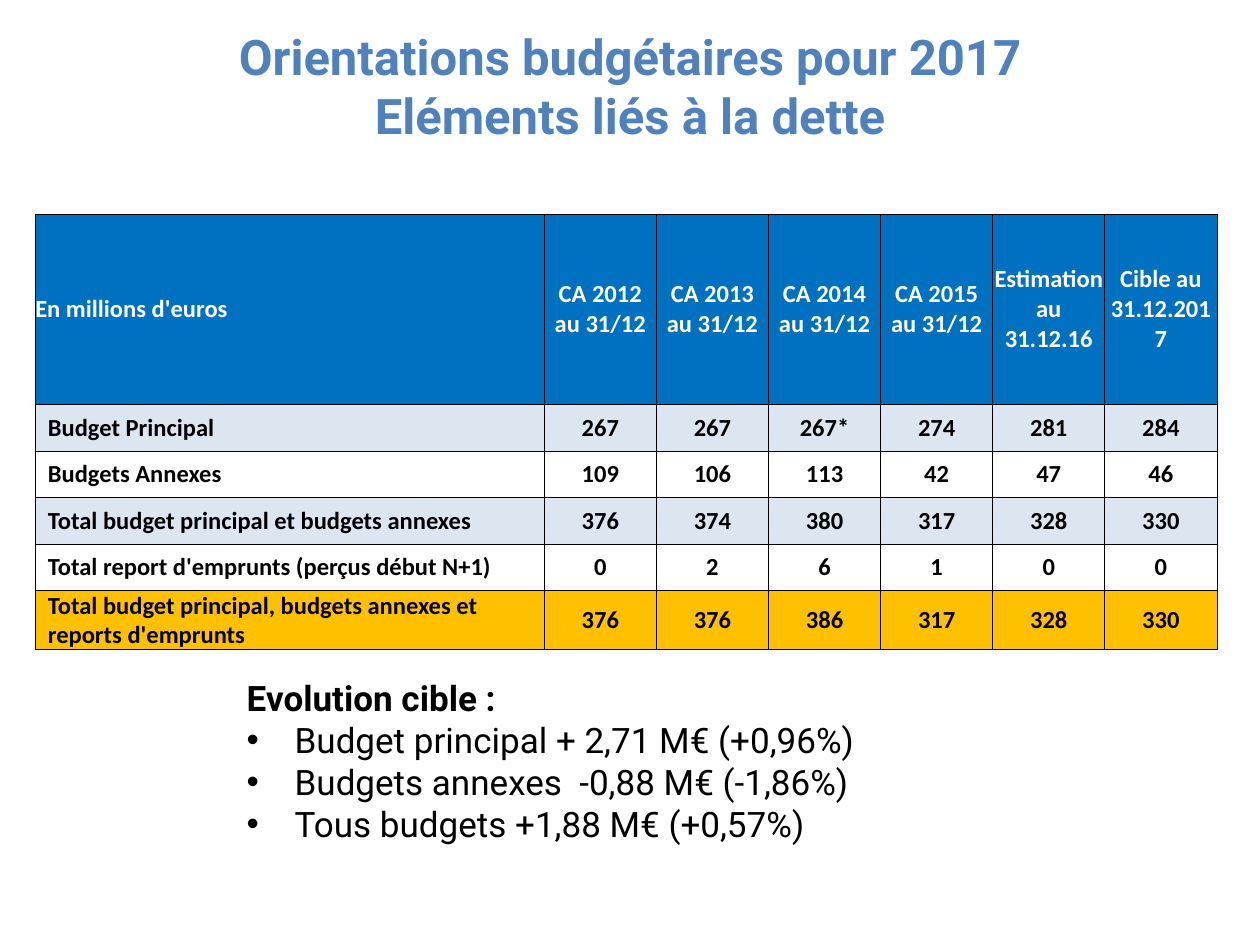
import dataclasses

import pptx
import pptx.dml.color
import pptx.enum.text
import pptx.oxml.ns
import pptx.util
from lxml import etree

Inches, Pt = pptx.util.Inches, pptx.util.Pt
ALIGN = pptx.enum.text.PP_ALIGN
ANCHOR = pptx.enum.text.MSO_ANCHOR
AUTO_SIZE = pptx.enum.text.MSO_AUTO_SIZE
qn = pptx.oxml.ns.qn

BLACK, WHITE = "000000", "FFFFFF"
HEADER_BLUE, PALE_BLUE, AMBER, TITLE_BLUE = "0070C0", "DCE6F1", "FFC000", "4F81BD"


@dataclasses.dataclass
class Row:
    label: str
    values: list[str]
    fill: str
    height: float = 0.37
    color: str = BLACK
    indent: float = 0.1


@dataclasses.dataclass
class Line:
    text: str
    bold: bool = False
    bullet: bool = False


TITLE = "Orientations budgétaires pour 2017\vEléments liés à la dette"

ROWS = [
    Row("En millions d'euros",
        [f"CA {year} au 31/12" for year in range(2012, 2016)]
        + ["Estimation au 31.12.16", "Cible au 31.12.2017"],
        HEADER_BLUE, height=1.51, color=WHITE, indent=0),
    Row("Budget Principal", ["267", "267", "267*", "274", "281", "284"], PALE_BLUE),
    Row("Budgets Annexes", ["109", "106", "113", "42", "47", "46"], WHITE),
    Row("Total budget principal et budgets annexes",
        ["376", "374", "380", "317", "328", "330"], PALE_BLUE),
    Row("Total report d'emprunts (perçus début N+1)",
        ["0", "2", "6", "1", "0", "0"], WHITE),
    Row("Total budget principal, budgets annexes et reports d'emprunts",
        ["376", "376", "386", "317", "328", "330"], AMBER, height=0.39),
]
COLUMN_WIDTHS = [4.04] + [0.89] * 6

LINES = [
    Line("Evolution cible :", bold=True),
    Line("Budget principal + 2,71 M€ (+0,96%)", bullet=True),
    Line("Budgets annexes  -0,88 M€ (-1,86%)", bullet=True),
    Line("Tous budgets +1,88 M€ (+0,57%)", bullet=True),
]


def rgb(color: str) -> pptx.dml.color.RGBColor:
    return pptx.dml.color.RGBColor.from_string(color)


def set_attrs(obj, values: dict) -> None:
    for name, value in values.items():
        setattr(obj, name, value)


def format_runs(p, name: str, size: float, color: str, bold: bool) -> None:
    for r in p.runs:
        set_attrs(r.font, {"name": name, "size": Pt(size), "bold": bold})
        r.font.color.rgb = rgb(color)


def set_indent(p, left: float, first: float = 0) -> None:
    pPr = p._p.get_or_add_pPr()
    pPr.set("marL", str(Inches(left)))
    pPr.set("indent", str(Inches(first)))


def add_bullet(p) -> None:
    set_indent(p, 0.38, -0.38)
    pPr = p._p.get_or_add_pPr()
    etree.SubElement(pPr, qn("a:buFont")).set("typeface", "Arial")
    etree.SubElement(pPr, qn("a:buChar")).set("char", "•")


def add_borders(cell, color: str, width: float) -> None:
    """Draw all four sides; border elements must precede the cell fill."""
    tcPr = cell._tc.get_or_add_tcPr()
    for i, side in enumerate(("lnL", "lnR", "lnT", "lnB")):
        ln = etree.Element(qn(f"a:{side}"), w=str(Pt(width)))
        fill = etree.SubElement(ln, qn("a:solidFill"))
        etree.SubElement(fill, qn("a:srgbClr")).set("val", color)
        tcPr.insert(i, ln)


def fill_cell(cell, text: str, row: Row, is_label: bool) -> None:
    set_attrs(cell, {"text": text, "vertical_anchor": ANCHOR.MIDDLE,
                     "margin_left": 0, "margin_right": 0,
                     "margin_top": 0, "margin_bottom": 0})
    cell.fill.solid()
    cell.fill.fore_color.rgb = rgb(row.fill)
    add_borders(cell, BLACK, 0.5)
    p = cell.text_frame.paragraphs[0]
    if is_label:
        set_indent(p, row.indent)
    else:
        p.alignment = ALIGN.CENTER
    format_runs(p, "Calibri", 14, row.color, True)


def format_title(sp, text: str) -> None:
    set_attrs(sp, {"left": Inches(0.5), "top": Inches(0.05),
                   "width": Inches(9), "height": Inches(1.25)})
    tf = sp.text_frame
    set_attrs(tf, {"text": text, "word_wrap": True, "auto_size": AUTO_SIZE.NONE,
                   "vertical_anchor": ANCHOR.MIDDLE})
    p = tf.paragraphs[0]
    p.alignment = ALIGN.CENTER
    format_runs(p, "Roboto", 28, TITLE_BLUE, True)


def add_debt_table(slide, rows: list[Row]) -> None:
    height = sum(row.height for row in rows)
    table = slide.shapes.add_table(
        len(rows), len(COLUMN_WIDTHS), Inches(0.28), Inches(1.7),
        Inches(sum(COLUMN_WIDTHS)), Inches(height)).table
    set_attrs(table, {"first_row": False, "horz_banding": False})
    for column, width in zip(table.columns, COLUMN_WIDTHS):
        column.width = Inches(width)
    for i, row in enumerate(rows):
        table.rows[i].height = Inches(row.height)
        for j, text in enumerate([row.label, *row.values]):
            fill_cell(table.cell(i, j), text, row, is_label=j == 0)


def add_target_text(slide, lines: list[Line]) -> None:
    sp = slide.shapes.add_textbox(Inches(1.86), Inches(5.32), Inches(7.09), Inches(1.45))
    tf = sp.text_frame
    set_attrs(tf, {"word_wrap": True, "auto_size": AUTO_SIZE.SHAPE_TO_FIT_TEXT})
    for i, line in enumerate(lines):
        p = tf.add_paragraph() if i else tf.paragraphs[0]
        p.text = line.text
        if line.bullet:
            add_bullet(p)
        format_runs(p, "Roboto", 20, BLACK, line.bold)


def main() -> None:
    prs = pptx.Presentation()
    set_attrs(prs, {"slide_width": Inches(10), "slide_height": Inches(7.5)})
    slide = prs.slides.add_slide(prs.slide_layouts[5])
    format_title(slide.shapes.title, TITLE)
    add_target_text(slide, LINES)
    add_debt_table(slide, ROWS)
    prs.save("out.pptx")


if __name__ == "__main__":
    main()
